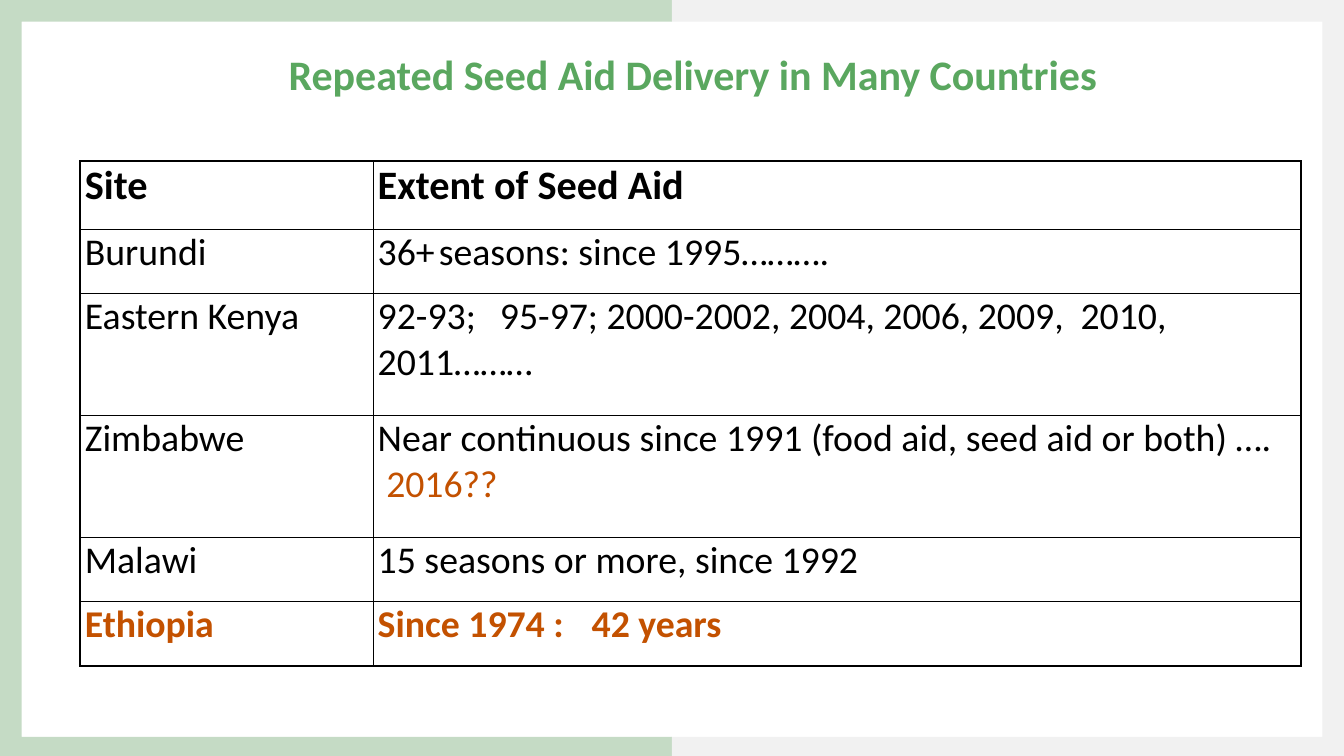
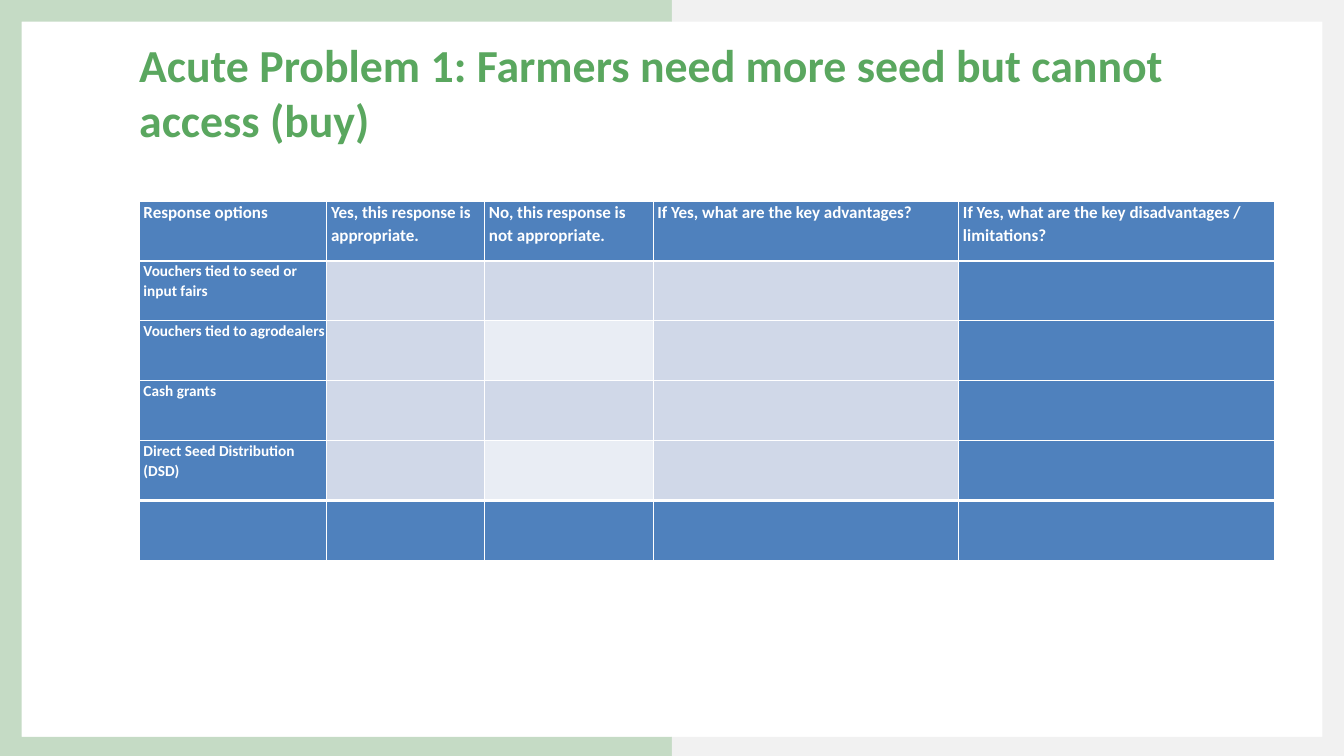
"""Builds two seed aid slides, each a titled table inside a two-tone frame."""
from lxml import etree
from pptx import Presentation
from pptx import util as u
from pptx.dml.color import RGBColor
from pptx.oxml import ns

COLORS = {
    "title": "5AA75F", "frame_left": "C5DBC5", "frame_right": "F1F1F1",
    "black": "000000", "white": "FFFFFF", "accent": "C35100",
    "blue": "4F81BD", "mist": "D0D8E8", "pale": "E9EDF4",
}
FONT = "Calibri"
WIDTH, HEIGHT = 1583.28, 890.64
SIDE, TOP, BOTTOM = 25.5, 25.5, 22.5


class SlideBuilder:
    def __init__(self):
        self.deck = Presentation()
        self.deck.slide_width = u.Pt(WIDTH)
        self.deck.slide_height = u.Pt(HEIGHT)
        self.slide = None

    def new_slide(self):
        self.slide = self.deck.slides.add_slide(self.deck.slide_layouts[6])
        self.bracket(0, SIDE, "frame_left")
        self.bracket(WIDTH, WIDTH - SIDE, "frame_right")

    def bracket(self, outer, inner, color):
        middle, floor = WIDTH / 2, HEIGHT - BOTTOM
        corners = [(middle, 0), (outer, 0), (outer, HEIGHT), (middle, HEIGHT),
                   (middle, floor), (inner, floor), (inner, TOP), (middle, TOP)]
        points = [(u.Pt(x), u.Pt(y)) for x, y in corners]
        outline = self.slide.shapes.build_freeform(*points[0])
        outline.add_line_segments(points[1:], close=True)
        shape = outline.convert_to_shape()
        shape.shadow.inherit = False
        shape.fill.solid()
        shape.fill.fore_color.rgb = RGBColor.from_string(COLORS[color])
        shape.line.fill.background()

    def style(self, span, size, color, bold):
        span.font.name = FONT
        span.font.size = u.Pt(size)
        span.font.bold = bold
        span.font.color.rgb = RGBColor.from_string(COLORS[color])

    def title(self, words, left, top, width, height, size):
        box = self.slide.shapes.add_textbox(*map(u.Pt, (left, top, width, height)))
        frame = box.text_frame
        frame.word_wrap = True
        frame.margin_left = frame.margin_right = 0
        frame.margin_top = frame.margin_bottom = 0
        frame.text = words
        self.style(frame.paragraphs[0].runs[0], size, "title", True)

    def table(self, left, top, widths, heights, across, down, line):
        """Adds a table; across and down list the widths of its rules."""
        frame = self.slide.shapes.add_table(
            len(heights), len(widths),
            *map(u.Pt, (left, top, sum(widths), sum(heights))))
        table = frame.table
        table.first_row = table.horz_banding = False
        for column, width in zip(table.columns, widths):
            column.width = u.Pt(width)
        for row, height in zip(table.rows, heights):
            row.height = u.Pt(height)
        for r in range(len(heights)):
            for c in range(len(widths)):
                cell = table.cell(r, c)
                cell.margin_left = cell.margin_right = 0
                cell.margin_top = cell.margin_bottom = 0
                edges = {"lnL": down[c], "lnR": down[c + 1],
                         "lnT": across[r], "lnB": across[r + 1]}
                for tag, weight in edges.items():
                    self.border(cell, tag, weight, line)
        return table

    def border(self, cell, tag, weight, color):
        properties = cell._tc.get_or_add_tcPr()
        edge = etree.SubElement(properties, ns.qn("a:" + tag), w=str(u.Pt(weight)))
        fill = etree.SubElement(edge, ns.qn("a:solidFill"))
        etree.SubElement(fill, ns.qn("a:srgbClr"), val=COLORS[color])

    def cell(self, cell, words, size, color, bold=False, fill=None,
             indent=5.5, before=0, spacing=1.0, tabs=()):
        if fill:
            cell.fill.solid()
            cell.fill.fore_color.rgb = RGBColor.from_string(COLORS[fill])
        else:
            cell.fill.background()
        cell.text_frame.text = words
        for para in cell.text_frame.paragraphs:
            para.space_before = u.Pt(before)
            para.line_spacing = spacing
            properties = para._p.get_or_add_pPr()
            properties.set("marL", str(u.Pt(indent)))
            properties.set("indent", "0")
            if tabs:
                stops = etree.SubElement(properties, ns.qn("a:tabLst"))
                for stop in tabs:
                    etree.SubElement(stops, ns.qn("a:tab"),
                                     pos=str(u.Pt(stop)), algn="l")
            for span in para.runs:
                self.style(span, size, color, bold)


def history_slide(builder):
    builder.new_slide()
    builder.title("Repeated Seed Aid Delivery in Many Countries",
                  340, 57, 989, 61, 49.5)
    rows = [
        ("Site", "Extent of Seed Aid", ()),
        ("Burundi", "36+\tseasons: since 1995……….", (90,)),
        ("Eastern Kenya",
         "92-93;\t95-97; 2000-2002, 2004, 2006, 2009,\t2010,\n2011………",
         (139.5, 826.5)),
        ("Zimbabwe",
         "Near continuous since 1991 (food aid, seed aid or both) ….\v 2016??", ()),
        ("Malawi", "15 seasons or more, since 1992", ()),
        ("Ethiopia", "Since 1974 :\t42 years", (251.5,)),
    ]
    table = builder.table(94.5, 190, [345, 1093], [80, 75.5, 144, 144, 75.5, 75.5],
                          [2.25, 1, 1, 1, 1, 1, 2.25], [2.25, 1, 2.25], "black")
    for r, (site, extent, tabs) in enumerate(rows):
        size = 47.5 if r == 0 else 44.5
        color = "accent" if site == "Ethiopia" else "black"
        bold = site in ("Site", "Ethiopia")
        builder.cell(table.cell(r, 0), site, size, color, bold)
        builder.cell(table.cell(r, 1), extent, size, color, bold, tabs=tabs)
    question = table.cell(3, 1).text_frame.paragraphs[0].runs[-1]
    builder.style(question, 44.5, "accent", False)


def response_slide(builder):
    builder.new_slide()
    builder.title("Acute Problem 1: Farmers need more seed but cannot access (buy)",
                  164, 43, 1255, 194, 54)
    headings = ["Response options", "Yes, this response is appropriate.",
                "No, this response is not appropriate.",
                "If Yes, what are the key advantages?",
                "If Yes, what are the key disadvantages / limitations?"]
    options = ["Vouchers tied to seed or input fairs", "Vouchers tied to agrodealers",
               "Cash grants", "Direct Seed Distribution (DSD)", ""]
    table = builder.table(164, 237, [221, 186, 198.5, 360, 371.5], [70.5] * 6,
                          [1, 3, 1, 1, 1, 3, 1], [1] * 6, "white")
    last = len(options)
    for r in range(last + 1):
        for c in range(len(headings)):
            words = headings[c] if r == 0 else options[r - 1] if c == 0 else ""
            if r in (0, last) or c in (0, 4):
                fill = "blue"
            else:
                fill = "pale" if c == 2 and r % 2 == 0 else "mist"
            builder.cell(table.cell(r, c), words, 20 if r == 0 else 18, "white",
                         True, fill, indent=5, before=5.5, spacing=1.07)


def main():
    builder = SlideBuilder()
    history_slide(builder)
    response_slide(builder)
    builder.deck.save("out.pptx")


if __name__ == "__main__":
    main()
